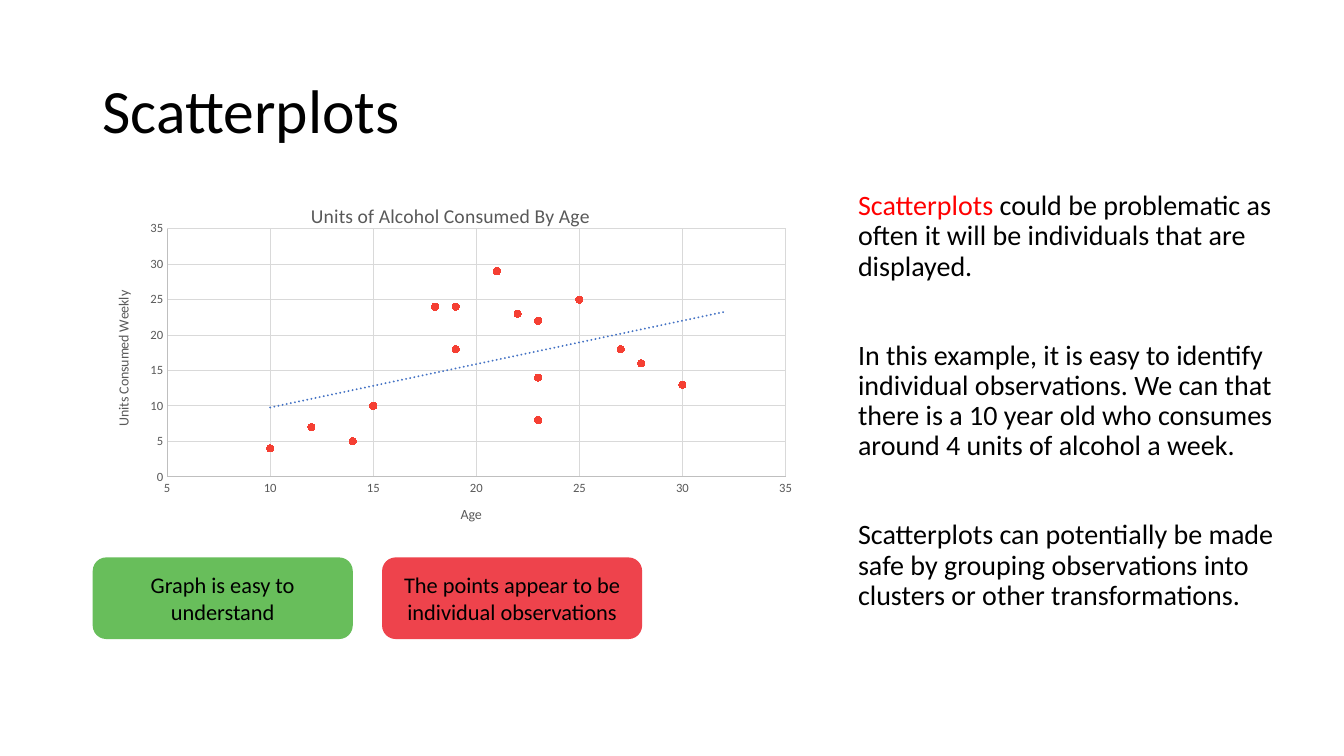
from dataclasses import dataclass

from lxml import etree
from pptx import Presentation
from pptx.chart.data import XyChartData
from pptx.dml.color import RGBColor
from pptx.enum.chart import XL_CHART_TYPE, XL_MARKER_STYLE, XL_TICK_MARK
from pptx.enum.shapes import MSO_SHAPE
from pptx.enum.text import MSO_ANCHOR, PP_ALIGN
from pptx.oxml import parse_xml
from pptx.oxml.ns import nsdecls, qn
from pptx.util import Inches, Pt

SCATTER = XL_CHART_TYPE.XY_SCATTER
CIRCLE = XL_MARKER_STYLE.CIRCLE
NO_TICK = XL_TICK_MARK.NONE
ROUNDED = MSO_SHAPE.ROUNDED_RECTANGLE
MIDDLE, TOP = MSO_ANCHOR.MIDDLE, MSO_ANCHOR.TOP
CENTER, LEFT = PP_ALIGN.CENTER, PP_ALIGN.LEFT

FONT = "Calibri"
COLORS = {
    "text": "000000", "highlight": "FF0000", "label": "595959",
    "axis": "BFBFBF", "grid": "D9D9D9", "point": "F53F33",
    "trend": "4472C4", "good": "68BE5B", "bad": "EE434C",
}

# The grid has 100 columns and 100 rows
WIDTH, HEIGHT = Inches(13.33), Inches(7.5)
COLUMN, ROW = WIDTH / 100, HEIGHT / 100
MARGIN, CONTENT_TOP = 6.9, 24.67
CARD_PITCH = 21.53


@dataclass(frozen=True)
class Area:
    left: float
    top: float
    width: float
    height: float

    def box(self) -> tuple[int, int, int, int]:
        return (round(self.left * COLUMN), round(self.top * ROW),
                round(self.width * COLUMN), round(self.height * ROW))


@dataclass(frozen=True)
class Run:
    text: str
    color: str = "text"


@dataclass(frozen=True)
class Card:
    text: str
    fill: str


TITLE_AREA = Area(MARGIN, 5.33, 86.25, 19.33)
BODY_AREA = Area(63.1, CONTENT_TOP, 34.6, 63.47)
CHART_AREA = Area(MARGIN, CONTENT_TOP, 53.26, 45.47)
PLOT_SHARES = {"x": 0.104, "y": 0.123, "w": 0.864, "h": 0.722}

TITLE = [[Run("Scatterplots")]]
BODY = [
    [Run("Scatterplots", "highlight"),
     Run(" could be problematic as often it will be individuals that are displayed.")],
    [Run("In this example, it is easy to identify individual observations. We can that "
         "there is a 10 year old who consumes around 4 units of alcohol a week.")],
    [Run("Scatterplots can potentially be made safe by grouping observations into "
         "clusters or other transformations.")],
]
CARDS = [
    Card("Graph is easy to understand", "good"),
    Card("The points appear to be individual observations", "bad"),
]
OBSERVATIONS = [
    (10, 4), (12, 7), (14, 5), (15, 10), (18, 24), (19, 24), (19, 18), (21, 29),
    (22, 23), (23, 8), (23, 14), (23, 22), (25, 25), (27, 18), (28, 16), (30, 13),
]


def rgb(name: str) -> RGBColor:
    return RGBColor.from_string(COLORS[name])


def style_font(font, size: float, color: str) -> None:
    font.name, font.size, font.bold = FONT, Pt(size), False
    font.color.rgb = rgb(color)


def write(frame, paragraphs: list[list[Run]], size: float, anchor=TOP,
          align=LEFT, spacing: float = 1.0, gap: float = 0) -> None:
    frame.word_wrap = True
    frame.vertical_anchor = anchor
    for index, runs in enumerate(paragraphs):
        paragraph = frame.add_paragraph() if index else frame.paragraphs[0]
        paragraph.alignment = align
        paragraph.line_spacing = spacing
        paragraph.space_before = Pt(gap if index else 0)
        for item in runs:
            run = paragraph.add_run()
            run.text = item.text
            style_font(run.font, size, item.color)


def add_text(slide, area: Area, paragraphs: list[list[Run]], size: float, **options) -> None:
    write(slide.shapes.add_textbox(*area.box()).text_frame, paragraphs, size, **options)


def add_card(slide, card: Card, area: Area) -> None:
    shape = slide.shapes.add_shape(ROUNDED, *area.box())
    shape.shadow.inherit = False
    shape.fill.solid()
    shape.fill.fore_color.rgb = rgb(card.fill)
    shape.line.fill.background()
    write(shape.text_frame, [[Run(card.text)]], 16, anchor=MIDDLE, align=CENTER)


def style_axis(axis, title: str, minimum: float) -> None:
    axis.minimum_scale, axis.maximum_scale, axis.major_unit = minimum, 35, 5
    axis.major_tick_mark = axis.minor_tick_mark = NO_TICK
    style_font(axis.tick_labels.font, 9, "label")
    axis.has_major_gridlines = True
    for line, color in ((axis.format.line, "axis"),
                        (axis.major_gridlines.format.line, "grid")):
        line.color.rgb = rgb(color)
        line.width = Pt(0.75)
    write(axis.axis_title.text_frame, [[Run(title, "label")]], 10, align=CENTER)


def add_trend_line(series) -> None:
    trend = parse_xml(
        f'<c:trendline {nsdecls("c", "a")}><c:spPr><a:ln w="{Pt(1.5)}" cap="rnd">'
        f'<a:solidFill><a:srgbClr val="{COLORS["trend"]}"/></a:solidFill>'
        '<a:prstDash val="sysDot"/></a:ln></c:spPr><c:trendlineType val="linear"/>'
        '<c:forward val="2"/><c:dispRSqr val="0"/><c:dispEq val="0"/></c:trendline>')
    series._element.find(qn("c:xVal")).addprevious(trend)


def place_plot(chart) -> None:
    plot_area = chart._chartSpace.chart.plotArea
    layout = plot_area.find(qn("c:layout"))
    if layout is None:
        layout = etree.Element(qn("c:layout"))
        plot_area.insert(0, layout)
    manual = etree.SubElement(layout, qn("c:manualLayout"))
    settings = {"layoutTarget": "inner", "xMode": "edge", "yMode": "edge", **PLOT_SHARES}
    for tag, value in settings.items():
        etree.SubElement(manual, qn(f"c:{tag}")).set("val", str(value))


def add_scatter(slide) -> None:
    data = XyChartData()
    points = data.add_series("Series 1")
    for age, units in OBSERVATIONS:
        points.add_data_point(age, units)
    chart = slide.shapes.add_chart(SCATTER, *CHART_AREA.box(), data).chart
    style_font(chart.font, 10, "text")
    chart.has_legend = False
    chart.has_title = True
    write(chart.chart_title.text_frame,
          [[Run("Units of Alcohol Consumed By Age", "label")]], 14, align=CENTER)
    chart.chart_title.include_in_layout = False
    style_axis(chart.category_axis, "Age", 5)
    style_axis(chart.value_axis, "Units Consumed Weekly", 0)
    chart.value_axis.axis_title.text_frame._txBody.bodyPr.set("rot", "-5400000")
    chart.plots[0].vary_by_categories = False

    series = chart.plots[0].series[0]
    series.format.line.fill.background()
    series.marker.style, series.marker.size = CIRCLE, 5
    series.marker.format.fill.solid()
    series.marker.format.fill.fore_color.rgb = rgb("point")
    series.marker.format.line.color.rgb = rgb("point")
    add_trend_line(series)
    place_plot(chart)


def main() -> None:
    presentation = Presentation()
    presentation.slide_width, presentation.slide_height = WIDTH, HEIGHT
    slide = presentation.slides.add_slide(presentation.slide_layouts[6])

    # Title and explanation
    add_text(slide, TITLE_AREA, TITLE, 44, anchor=MIDDLE, spacing=0.9)
    add_text(slide, BODY_AREA, BODY, 20, spacing=0.9, gap=42)

    # Chart
    add_scatter(slide)

    # Verdict cards
    for index, card in enumerate(CARDS):
        add_card(slide, card, Area(MARGIN + index * CARD_PITCH, 73.73, 19.35, 10.8))

    presentation.save("out.pptx")


if __name__ == "__main__":
    main()
